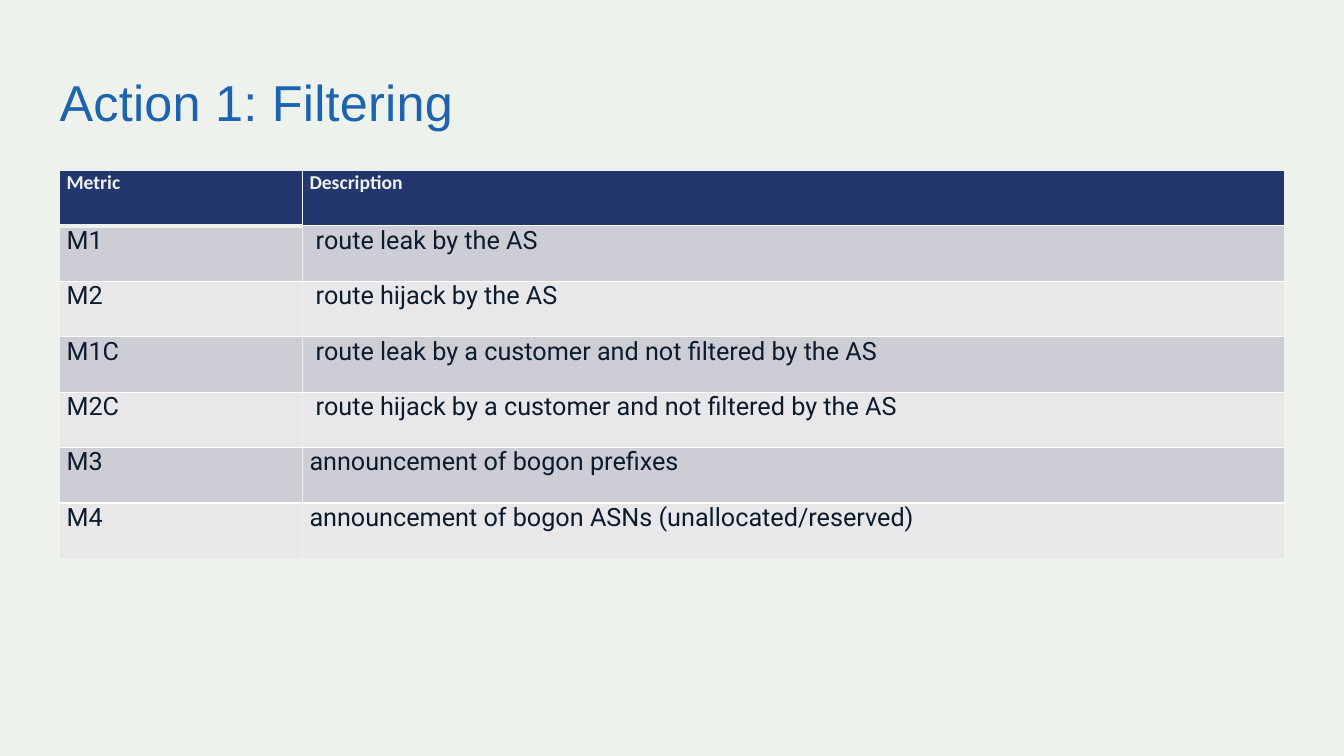
from dataclasses import dataclass

from lxml.etree import SubElement
from pptx import Presentation
from pptx.dml.color import RGBColor
from pptx.oxml.ns import qn
from pptx.table import _Cell
from pptx.util import Inches, Pt

PAPER = RGBColor(0xEE, 0xF2, 0xEC)
BLUE = RGBColor(0x1D, 0x63, 0xAF)
NAVY = RGBColor(0x24, 0x36, 0x6E)
INK = RGBColor(0x0C, 0x1C, 0x2C)
DARK = RGBColor(0xCD, 0xCE, 0xD5)
LIGHT = RGBColor(0xE8, 0xE8, 0xEB)

# Grid
WIDTH, HEIGHT = Inches(13.33), Inches(7.5)
LEFT = Inches(0.59)
COLS = (Inches(2.41), Inches(9.74))
ROW = Inches(0.55)


@dataclass(frozen=True)
class Style:
    font: str
    size: int
    color: RGBColor
    bold: bool = False


@dataclass(frozen=True)
class Metric:
    code: str
    text: str


TITLE = Style("Arial", 36, BLUE)
HEAD = Style("Calibri", 14, PAPER, True)
BODY = Style("Roboto", 18, INK)

ROWS = (
    Metric("Metric", "Description"),
    Metric("M1", " route leak by the AS"),
    Metric("M2", " route hijack by the AS"),
    Metric("M1C", " route leak by a customer and not filtered by the AS"),
    Metric("M2C", " route hijack by a customer and not filtered by the AS"),
    Metric("M3", "announcement of bogon prefixes"),
    Metric("M4", "announcement of bogon ASNs (unallocated/reserved)"),
)


def write(frame, text: str, style: Style) -> None:
    para = frame.paragraphs[0]
    para.text = text
    font = para.font
    font.name, font.size, font.bold = style.font, Pt(style.size), style.bold
    font.color.rgb = style.color


def rule(cell: _Cell, side: str, width: int) -> None:
    line = SubElement(cell._tc.get_or_add_tcPr(), qn(f"a:ln{side}"), w=str(Pt(width)))
    fill = SubElement(line, qn("a:solidFill"))
    SubElement(fill, qn("a:srgbClr"), val=str(PAPER))


def add_title(slide) -> None:
    box = slide.shapes.add_textbox(LEFT, Inches(0.62), sum(COLS), Inches(0.86))
    frame = box.text_frame
    frame.word_wrap = True
    frame.margin_left = frame.margin_right = frame.margin_bottom = 0
    frame.margin_top = Inches(0.05)
    write(frame, "Action 1: Filtering", TITLE)
    para = frame.paragraphs[0]
    para.line_spacing = 1.06
    para.runs[0].font._element.set("spc", "20")


def add_grid(slide) -> None:
    table = slide.shapes.add_table(
        len(ROWS), len(COLS), LEFT, Inches(1.69), sum(COLS), ROW * len(ROWS)
    ).table
    for col, width in zip(table.columns, COLS):
        col.width = width
    for r, metric in enumerate(ROWS):
        table.rows[r].height = ROW
        shade = NAVY if r == 0 else DARK if r % 2 else LIGHT
        for c, text in enumerate((metric.code, metric.text)):
            cell = table.cell(r, c)
            cell.margin_left = cell.margin_right = Inches(0.07)
            cell.margin_top = cell.margin_bottom = 0
            write(cell.text_frame, text, BODY if r else HEAD)
            # A thick rule sits under the first heading only
            thick = 3 if (r, c) == (0, 0) else 1
            for side in ("L", "R", "B") if r else ("L", "R", "T", "B"):
                rule(cell, side, thick if side == "B" else 1)
            cell.fill.solid()
            cell.fill.fore_color.rgb = shade


def main() -> None:
    deck = Presentation()
    deck.slide_width, deck.slide_height = WIDTH, HEIGHT
    slide = deck.slides.add_slide(deck.slide_layouts[6])
    slide.background.fill.solid()
    slide.background.fill.fore_color.rgb = PAPER
    add_title(slide)
    add_grid(slide)
    deck.save("out.pptx")


if __name__ == "__main__":
    main()
